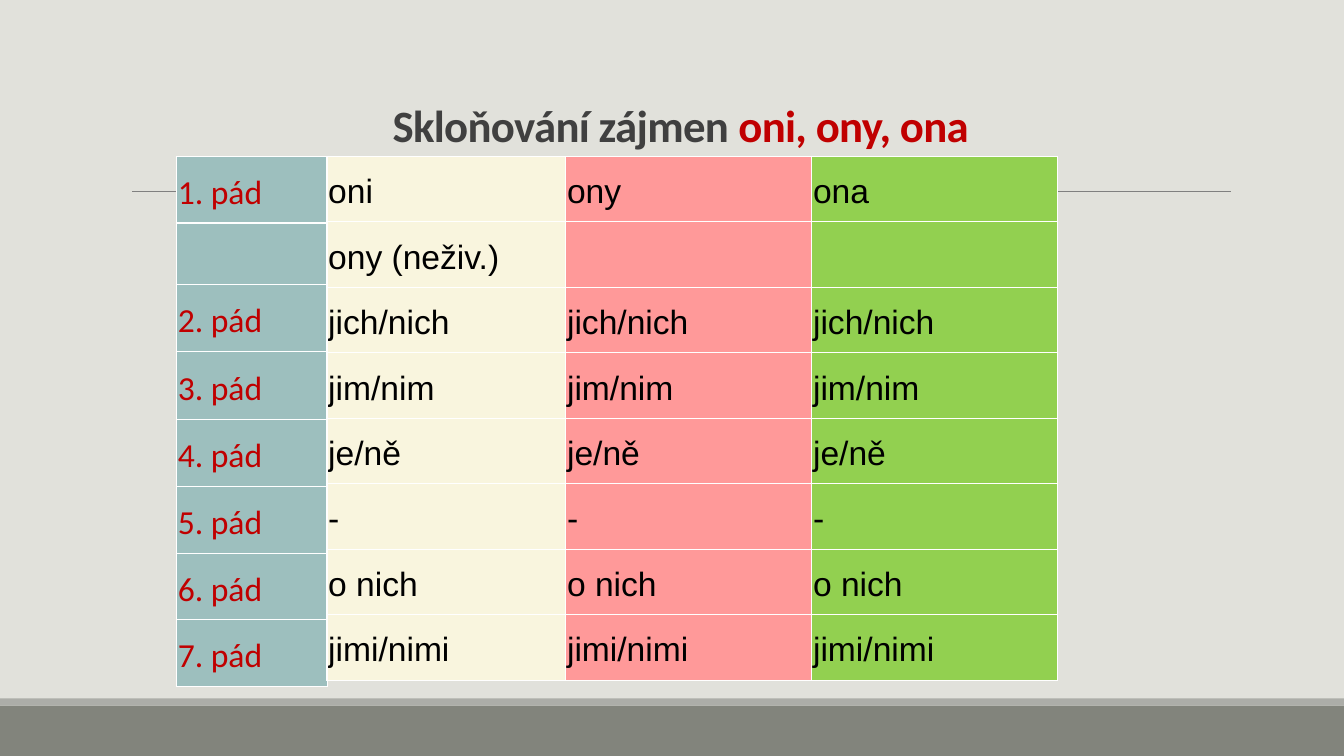
from lxml import etree
from pptx import Presentation
from pptx import util as u
from pptx.dml import color
from pptx.enum import shapes, text
from pptx.oxml import ns

COLORS = {
    "background": "E1E1DB", "footer": "82847C", "stripe": "ACADA8",
    "rule": "808080", "title": "404040", "accent": "C00000",
    "case": "9DBFBE", "masculine": "F9F5DE", "feminine": "FF9999",
    "neuter": "92D050", "text": "000000", "border": "FFFFFF",
}
CASES = [["1. pád"], [""]] + [[f"{number}. pád"] for number in range(2, 8)]
SHARED_FORMS = ["jich/nich", "jim/nim", "je/ně", "-", "o nich", "jimi/nimi"]
PRONOUNS = [["oni", "ony", "ona"], ["ony (neživ.)", "", ""]]
PRONOUNS += [[form] * 3 for form in SHARED_FORMS]


def apply(target, values):
    """Set every attribute in a dict of format values."""
    for name, value in values.items():
        setattr(target, name, value)


def rgb(name):
    """Return the named colour."""
    return color.RGBColor.from_string(COLORS[name])


def paint(fill, name):
    """Make a fill solid in the named colour."""
    fill.solid()
    fill.fore_color.rgb = rgb(name)


def add_run(paragraph, words, color_name, font_values):
    """Add a formatted run and return it."""
    run = paragraph.add_run()
    run.text = words
    apply(run.font, font_values)
    run.font.color.rgb = rgb(color_name)
    return run


def add_band(slide, top, height, color_name):
    """Add a plain band across the full slide width."""
    shape = slide.shapes.add_shape(
        shapes.MSO_SHAPE.RECTANGLE, 0, u.Cm(top), u.Cm(33.87), u.Cm(height))
    shape.shadow.inherit = False
    paint(shape.fill, color_name)
    shape.line.fill.background()


def add_rule(slide, left, right, top):
    """Add the thin horizontal rule."""
    connector = slide.shapes.add_connector(
        shapes.MSO_CONNECTOR.STRAIGHT, u.Cm(left), u.Cm(top), u.Cm(right), u.Cm(top))
    connector.line.width = u.Pt(0.5)
    connector.line.color.rgb = rgb("rule")
    etree.SubElement(connector._element.spPr, ns.qn("a:effectLst"))


def add_title(slide, parts):
    """Add the centred title from pairs of words and colour."""
    box = slide.shapes.add_textbox(u.Cm(5.94), u.Cm(1.12), u.Cm(22.43), u.Cm(2.82))
    apply(box.text_frame, {"word_wrap": True, "vertical_anchor": text.MSO_ANCHOR.BOTTOM})
    paragraph = box.text_frame.paragraphs[0]
    apply(paragraph, {"alignment": text.PP_ALIGN.CENTER, "line_spacing": 0.85})
    font_values = {"name": "Calibri", "size": u.Pt(32), "bold": True}
    for words, color_name in parts:
        run = add_run(paragraph, words, color_name, font_values)
        run.font._element.set("spc", "-50")


def add_borders(cell):
    """Draw thin borders on all four sides of a cell."""
    properties = cell._tc.get_or_add_tcPr()
    for index, side in enumerate(("lnL", "lnR", "lnT", "lnB")):
        line = etree.Element(ns.qn(f"a:{side}"), w=str(u.Pt(1)))
        fill = etree.SubElement(line, ns.qn("a:solidFill"))
        etree.SubElement(fill, ns.qn("a:srgbClr"), val=COLORS["border"])
        properties.insert(index, line)


def fill_cell(cell, words, fill_name, text_color, font_name):
    """Format one table cell and write its words."""
    margins = {f"margin_{side}": u.Cm(0.03) for side in ("left", "right", "top", "bottom")}
    apply(cell, {**margins, "vertical_anchor": text.MSO_ANCHOR.MIDDLE})
    paint(cell.fill, fill_name)
    add_borders(cell)
    if words:
        paragraph = cell.text_frame.paragraphs[0]
        paragraph.line_spacing = 1.15
        add_run(paragraph, words, text_color, {"name": font_name, "size": u.Pt(24)})


def add_grid(slide, left, widths, heights, rows, fills, text_color, font_name):
    """Add a table with one fill colour per column."""
    table = slide.shapes.add_table(
        len(rows), len(widths), u.Cm(left), u.Cm(3.94),
        u.Cm(sum(widths)), u.Cm(sum(heights))).table
    apply(table, {"first_row": False, "horz_banding": False})
    for column, width in zip(table.columns, widths):
        column.width = u.Cm(width)
    for row, height, entries in zip(table.rows, heights, rows):
        row.height = u.Cm(height)
        for cell, words, fill_name in zip(row.cells, entries, fills):
            fill_cell(cell, words, fill_name, text_color, font_name)


def main():
    """Build the pronoun declension slide."""
    presentation = Presentation()
    apply(presentation, {"slide_width": u.Cm(33.87), "slide_height": u.Cm(19.05)})
    slide = presentation.slides.add_slide(presentation.slide_layouts[6])
    paint(slide.background.fill, "background")
    add_band(slide, 17.78, 1.27, "footer")
    add_band(slide, 17.6, 0.18, "stripe")
    add_rule(slide, 3.33, 31.01, 4.83)
    add_title(slide, [("Skloňování zájmen ", "title"), ("oni, ony, ona", "accent")])
    add_grid(slide, 4.45, [3.8], [1.68, 1.55, 1.68, 1.73] + [1.68] * 4,
             CASES, ["case"], "accent", "Calibri")
    add_grid(slide, 8.24, [6.02, 6.2, 6.2], [1.65] * 8,
             PRONOUNS, ["masculine", "feminine", "neuter"], "text", "Arial")
    presentation.save("out.pptx")


if __name__ == "__main__":
    main()
